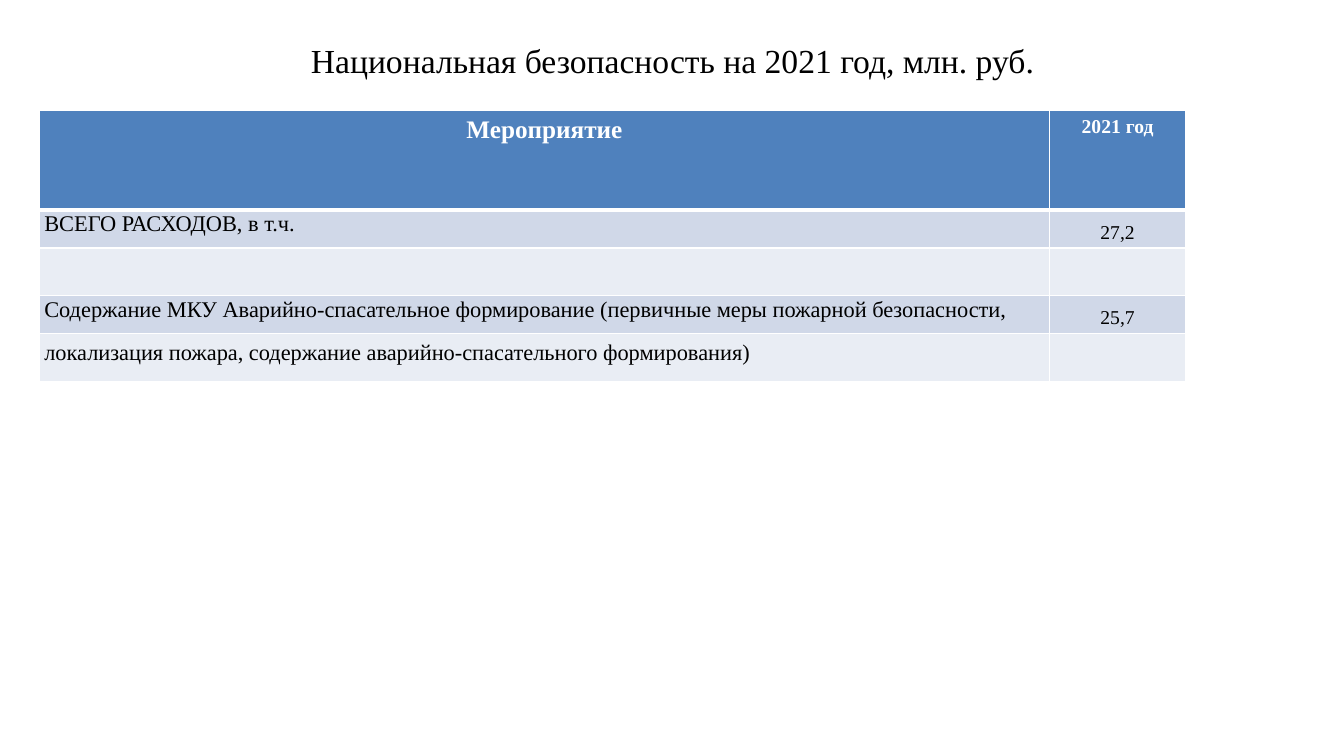
from lxml import etree
from pptx import Presentation
from pptx import util as u
from pptx.dml.color import RGBColor
from pptx.enum import text
from pptx.oxml import ns

# Content
TITLE = "Национальная безопасность на 2021 год, млн. руб."
ROWS = [
    ("Мероприятие", "2021 год"),
    ("ВСЕГО РАСХОДОВ, в т.ч.", "27,2"),
    ("", ""),
    ("Содержание МКУ Аварийно-спасательное формирование "
     "(первичные меры пожарной безопасности,", "25,7"),
    ("локализация пожара, содержание аварийно-спасательного формирования)", ""),
]
WIDTHS = (10.02, 1.35)
HEAD_H, ROW_H = 0.98, 0.38
HEAD_SIZES, BODY_SIZES = (18, 14), (16, 14)
HEAD_FILL, BANDS = "4F81BD", ("E9EDF4", "D0D8E8")
FONT = "Times New Roman"
WHITE, BLACK = "FFFFFF", "000000"


def color(code):
    return RGBColor.from_string(code)


def style(para, size, code, bold=False):
    for run in para.runs:
        run.font.name = FONT
        run.font.size = u.Pt(size)
        run.font.bold = bold
        run.font.color.rgb = color(code)


def border(cell, low):
    props = cell._tc.get_or_add_tcPr()
    for side, width in (("L", 1), ("R", 1), ("T", 1), ("B", low)):
        line = etree.SubElement(props, ns.qn("a:ln" + side), w=str(u.Pt(width)))
        fill = etree.SubElement(line, ns.qn("a:solidFill"))
        etree.SubElement(fill, ns.qn("a:srgbClr"), val=WHITE)


def paint(cell, code):
    cell.fill.solid()
    cell.fill.fore_color.rgb = color(code)


def main():
    prs = Presentation()
    prs.slide_width, prs.slide_height = u.Inches(13.33), u.Inches(7.5)
    slide = prs.slides.add_slide(prs.slide_layouts[5])

    # Title
    title = slide.shapes.title
    title.left, title.top = u.Inches(0.67), u.Inches(0.3)
    title.width, title.height = u.Inches(12), u.Inches(0.6)
    frame = title.text_frame
    frame.text = TITLE
    frame.vertical_anchor = text.MSO_ANCHOR.MIDDLE
    frame.paragraphs[0].alignment = text.PP_ALIGN.CENTER
    style(frame.paragraphs[0], 24, BLACK)

    # Table grid
    heights = [HEAD_H] + [ROW_H] * (len(ROWS) - 1)
    table = slide.shapes.add_table(
        len(ROWS), len(WIDTHS), u.Inches(0.39), u.Inches(1.1),
        u.Inches(sum(WIDTHS)), u.Inches(sum(heights))).table
    for col, width in zip(table.columns, WIDTHS):
        col.width = u.Inches(width)
    for row, height in zip(table.rows, heights):
        row.height = u.Inches(height)

    # Cells
    for r, row in enumerate(ROWS):
        head = r == 0
        for c, words in enumerate(row):
            cell = table.cell(r, c)
            cell.text_frame.text = words
            para = cell.text_frame.paragraphs[0]
            if head or c == 1:
                para.alignment = text.PP_ALIGN.CENTER
            if head:
                style(para, HEAD_SIZES[c], WHITE, True)
            else:
                style(para, BODY_SIZES[c], BLACK)
                cell.margin_left = cell.margin_right = u.Inches(0.05)
                cell.margin_top = cell.margin_bottom = 0
                para.line_spacing = u.Pt(11 + c)
                if c == 0:
                    cell.vertical_anchor = text.MSO_ANCHOR.MIDDLE
                else:
                    cell.margin_top = u.Pt(12)  # value sits on the second line
            border(cell, 3 if head else 1)
            paint(cell, HEAD_FILL if head else BANDS[r % 2])

    prs.save("out.pptx")


if __name__ == "__main__":
    main()
